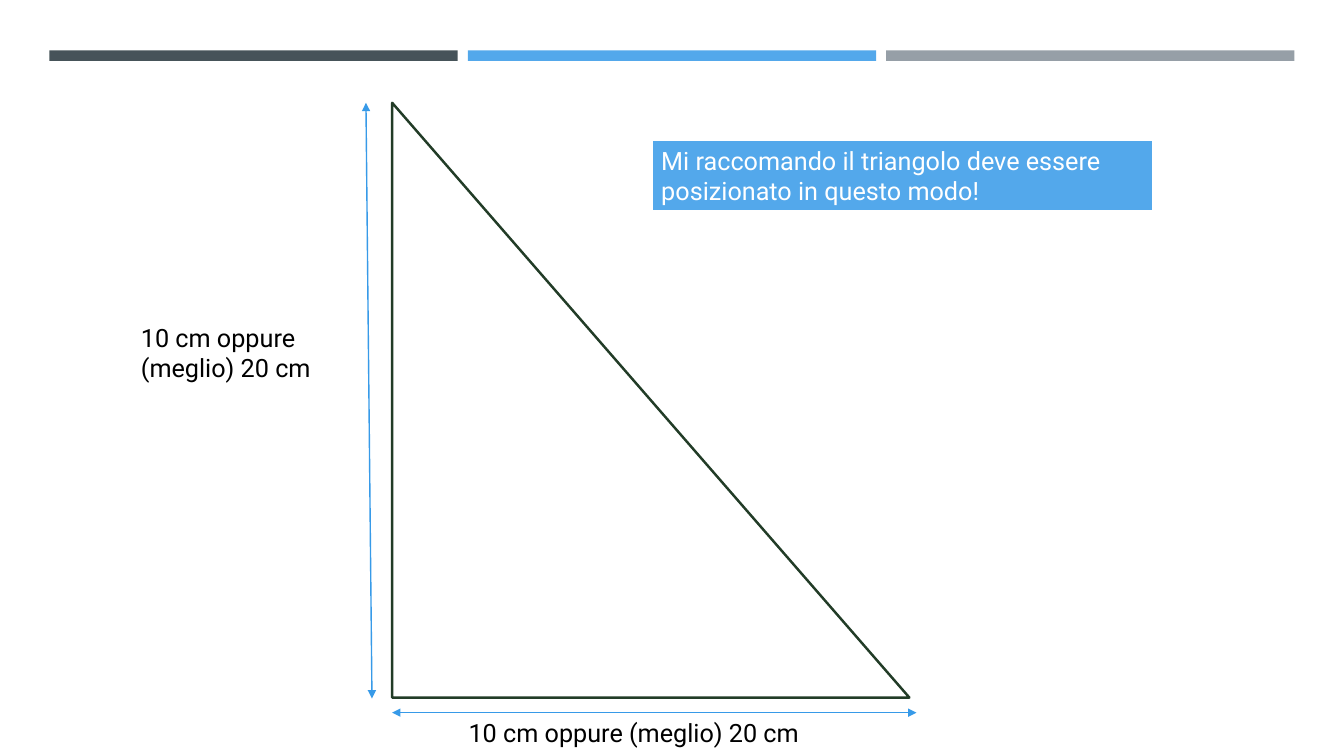
from lxml.etree import SubElement
from pptx import Presentation
from pptx.dml.color import RGBColor
from pptx.enum.shapes import MSO_CONNECTOR, MSO_SHAPE
from pptx.enum.text import MSO_ANCHOR, PP_ALIGN
from pptx.oxml.ns import qn
from pptx.util import Inches, Pt

presentation = Presentation()
presentation.slide_width = Inches(13.33)
presentation.slide_height = Inches(7.5)
slide = presentation.slides.add_slide(presentation.slide_layouts[6])
column = presentation.slide_width / 100
row = presentation.slide_height / 100


def grid(*cells):
    return [round(cell * unit) for cell, unit in zip(cells, (column, row, column, row))]


def paint(target, color):
    target.solid()
    target.fore_color.rgb = RGBColor.from_string(color)


bar_width, bar_pitch = 30.38, 31.13
for index, color in enumerate(("465359", "53A8EB", "969FA7")):
    bar = slide.shapes.add_shape(
        MSO_SHAPE.RECTANGLE, *grid(3.68 + index * bar_pitch, 6.67, bar_width, 1.4)
    )
    bar.shadow.inherit = False
    paint(bar.fill, color)
    bar.line.fill.background()

left, top, base, height = 29.18, 13.6, 38.48, 78.67
triangle = slide.shapes.add_shape(MSO_SHAPE.RIGHT_TRIANGLE, *grid(left, top, base, height))
triangle.shadow.inherit = False
triangle.fill.background()
paint(triangle.line.fill, "223C27")
triangle.line.width = Pt(1.75)

measure_row = 94.27
for ends in ((27.23, top, 27.68, 92.4), (left, measure_row, 68.19, measure_row)):
    arrow = slide.shapes.add_connector(MSO_CONNECTOR.STRAIGHT, *grid(*ends))
    paint(arrow.line.fill, "379AE8")
    arrow.line.width = Pt(1)
    properties = arrow.element.spPr
    outline = properties.find(qn("a:ln"))
    for end in ("a:headEnd", "a:tailEnd"):
        SubElement(outline, qn(end), type="triangle")
    SubElement(properties, qn("a:effectLst"))

notes = (
    ((9.75, 42, 14.85, 9.47), ("10 cm oppure", "(meglio) 20 cm"), "000000", None),
    ((34.13, measure_row, 32.63, 5.33), ("10 cm oppure (meglio) 20 cm",), "000000", None),
    (
        (48.46, 18.53, 37.36, 9.47),
        ("Mi raccomando il triangolo deve essere", "posizionato in questo modo!"),
        "FFFFFF",
        "53A8EB",
    ),
)
frame_format = {"word_wrap": True, "vertical_anchor": MSO_ANCHOR.TOP}
font_format = {"name": "Roboto", "size": Pt(18)}
for place, lines, color, background in notes:
    note = slide.shapes.add_textbox(*grid(*place))
    if background:
        paint(note.fill, background)
        paint(note.line.fill, "FFFFFF")
        note.line.width = Pt(2)
    frame = note.text_frame
    for name, value in frame_format.items():
        setattr(frame, name, value)
    frame.text = "\n".join(lines)
    for paragraph in frame.paragraphs:
        paragraph.alignment = PP_ALIGN.LEFT
        for name, value in font_format.items():
            setattr(paragraph.runs[0].font, name, value)
        paint(paragraph.runs[0].font.fill, color)

presentation.save("out.pptx")
